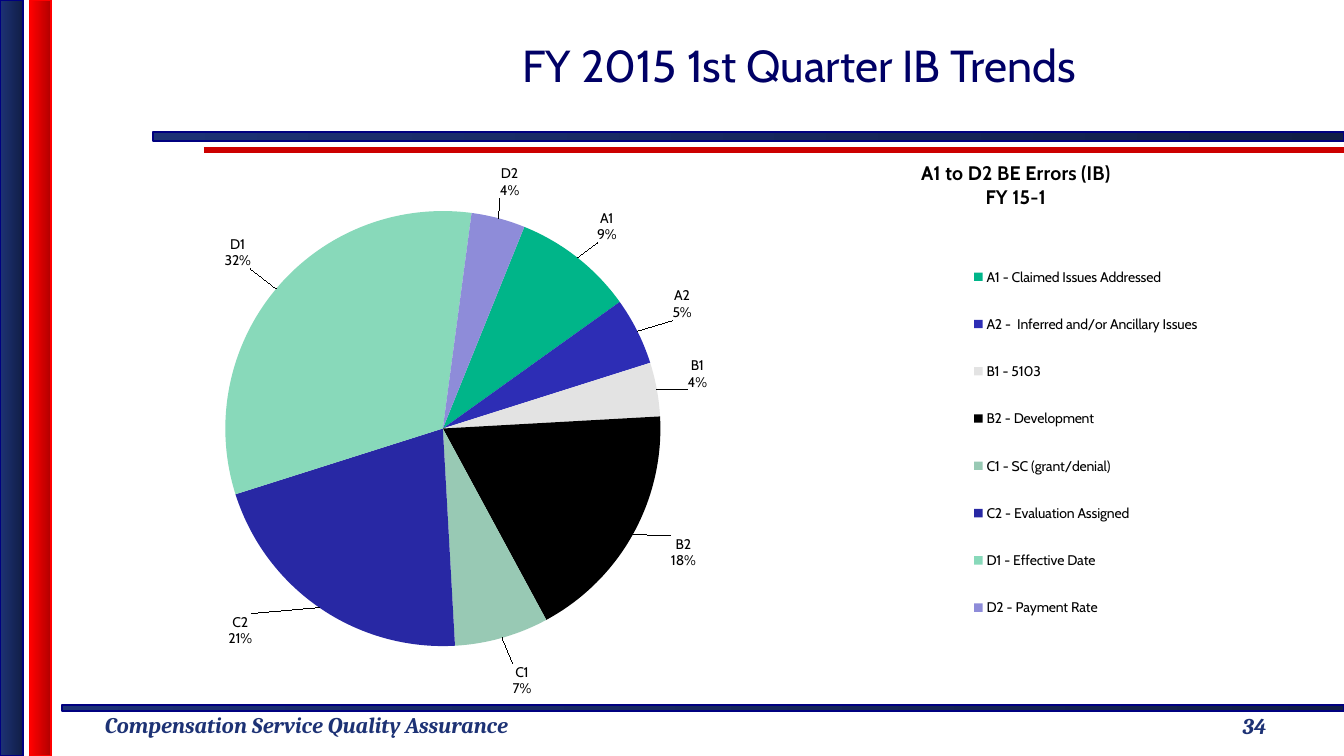
from dataclasses import dataclass
from lxml.etree import SubElement
from pptx import Presentation
from pptx.chart.data import CategoryChartData
from pptx.dml.color import RGBColor
from pptx.enum.chart import XL_CHART_TYPE, XL_LABEL_POSITION, XL_LEGEND_POSITION
from pptx.enum.shapes import MSO_CONNECTOR, MSO_SHAPE
from pptx.enum.text import MSO_ANCHOR, PP_ALIGN
from pptx.oxml.ns import qn
from pptx.util import Emu, Pt


@dataclass(frozen=True)
class Theme:
    navy: str = "1D3275"
    dusk: str = "111E46"
    edge: str = "000080"
    red: str = "FF0000"
    wine: str = "B20000"
    rule: str = "CC0000"
    head: str = "000066"
    ink: str = "000000"
    sans: str = "Cabin"
    serif: str = "Cambria"
    big: int = 32
    foot: int = 16
    mid: int = 14
    small: int = 10


SLICES = [
    ("A1 - Claimed Issues Addressed", 9, "00B589", (16, -10)),
    ("A2 -  Inferred and/or Ancillary Issues", 5, "2D2DB5", (30, -8)),
    ("B1 - 5103", 4, "E3E3E3", (25, 2)),
    ("B2 - Development", 18, "000000", (33, -2)),
    ("C1 - SC (grant/denial)", 7, "98C9B4", (9, 20)),
    ("C2 - Evaluation Assigned", 21, "2828A4", (-64, 1)),
    ("D1 - Effective Date", 32, "88D9BA", (-21, -16)),
    ("D2 - Payment Rate", 4, "8E8CD9", (0, -14)),
]


class Deck:
    """Draws the parts of one slide in a single style, with lengths in px."""

    def __init__(self, theme):
        self.theme = theme
        self.show = Presentation()
        self.show.slide_width, self.show.slide_height = self.px(1344, 756)
        self.slide = self.show.slides.add_slide(self.show.slide_layouts[5])
        self.shapes = self.slide.shapes

    def px(self, *sizes):
        return [Emu(round(size * 914400 / 100.8)) for size in sizes]

    def style(self, font, size, color, face, bold=False, italic=False):
        font.size, font.name = Pt(size), face
        font.bold, font.italic = bold, italic
        font.color.rgb = RGBColor.from_string(color)

    def text(self, frame, lines, *look, align=PP_ALIGN.CENTER):
        for row, line in enumerate(lines):
            para = frame.add_paragraph() if row else frame.paragraphs[0]
            para.alignment = align
            run = para.add_run()
            run.text = line
            self.style(run.font, *look)

    def bar(self, box, start, end, edge):
        shape = self.shapes.add_shape(MSO_SHAPE.RECTANGLE, *self.px(*box))
        shape.shadow.inherit = False
        shape.fill.gradient()
        shape.fill.gradient_angle = 0
        for stop, color in zip(shape.fill.gradient_stops, (start, end)):
            stop.color.rgb = RGBColor.from_string(color)
        shape.line.color.rgb = RGBColor.from_string(edge)
        shape.line.width = Pt(1)

    def line(self, ends, color, width):
        line = self.shapes.add_connector(MSO_CONNECTOR.STRAIGHT, *self.px(*ends))
        line.line.color.rgb = RGBColor.from_string(color)
        line.line.width = Pt(width)
        SubElement(line._element.spPr, qn("a:effectLst"))

    def title(self, box, text):
        shape = self.shapes.title
        shape.left, shape.top, shape.width, shape.height = self.px(*box)
        shape.text_frame.vertical_anchor = MSO_ANCHOR.MIDDLE
        self.text(shape.text_frame, [text],
                  self.theme.big, self.theme.head, self.theme.sans)

    def note(self, box, text, align):
        frame = self.shapes.add_textbox(*self.px(*box)).text_frame
        frame.word_wrap = True
        frame.vertical_anchor = MSO_ANCHOR.MIDDLE
        self.text(frame, [text], self.theme.foot, self.theme.navy,
                  self.theme.serif, True, True, align=align)

    def place(self, part, index, **spots):
        for old in part.findall(qn("c:layout")):
            part.remove(old)
        layout = SubElement(part, qn("c:layout"))
        manual = SubElement(layout, qn("c:manualLayout"))
        for tag, value in spots.items():
            SubElement(manual, qn("c:" + tag)).set("val", str(value))
        part.insert(index, layout)

    def pie(self, box, title, slices, turn):
        theme = self.theme
        data = CategoryChartData()
        data.categories = [name for name, *rest in slices]
        data.add_series(" ".join(title), [value for name, value, *rest in slices])
        chart = self.shapes.add_chart(
            XL_CHART_TYPE.PIE, *self.px(*box), data).chart
        self.style(chart.font, theme.small, theme.ink, theme.sans)

        chart.has_title = True
        head = chart.chart_title
        self.text(head.text_frame, title, theme.mid, theme.ink, theme.sans, True)
        self.place(head._element, 1, xMode="edge", yMode="edge", x=0.67, y=0.05)

        chart.has_legend = True
        legend = chart.legend
        legend.position = XL_LEGEND_POSITION.RIGHT
        legend.include_in_layout = False
        self.style(legend.font, theme.small, theme.ink, theme.sans)
        self.place(legend._element, 1, xMode="edge", yMode="edge",
                   x=0.7, y=0.19, w=0.2, h=0.7)

        plot = chart.plots[0]
        plot.vary_by_categories = True
        SubElement(plot._element, qn("c:firstSliceAng")).set("val", str(turn))
        self.place(plot._element.getparent(), 0, layoutTarget="inner",
                   xMode="edge", yMode="edge", x=0.085, y=0.144, w=0.434, h=0.745)
        self.labels(plot.series[0], slices, box)

    def labels(self, series, slices, box):
        theme = self.theme
        for index, (name, value, color, (right, down)) in enumerate(slices):
            point = series.points[index]
            point.format.fill.solid()
            point.format.fill.fore_color.rgb = RGBColor.from_string(color)
            point.format.line.fill.background()
            label = point.data_label
            self.text(label.text_frame, [name[:2], f"{value}%"],
                      theme.small, theme.ink, theme.sans)
            label.position = XL_LABEL_POSITION.OUTSIDE_END
            part = series.data_labels._element.findall(qn("c:dLbl"))[index]
            self.place(part, 1, x=round(right / box[2], 4),
                       y=round(down / box[3], 4))


def main():
    theme = Theme()
    deck = Deck(theme)
    deck.line((204, 150, 1344, 150), theme.rule, 4)
    deck.bar((62, 705, 1282, 6), theme.navy, theme.dusk, theme.edge)
    deck.bar((153, 132, 1191, 9), theme.navy, theme.dusk, theme.edge)
    deck.bar((0, 0, 23, 756), theme.navy, theme.dusk, theme.edge)
    deck.bar((30, 0, 21, 756), theme.red, theme.wine, theme.red)
    deck.note((95, 706, 499, 37), "Compensation Service Quality Assurance",
              PP_ALIGN.LEFT)
    deck.title((255, 0, 1089, 130), "FY 2015 1st Quarter IB Trends")
    deck.note((1165, 701, 179, 50), "34", PP_ALIGN.CENTER)
    deck.pie((53, 127, 1291, 584), ["A1 to D2 BE Errors (IB)", "FY 15-1"],
             SLICES, 22)
    deck.show.save("out.pptx")


if __name__ == "__main__":
    main()
